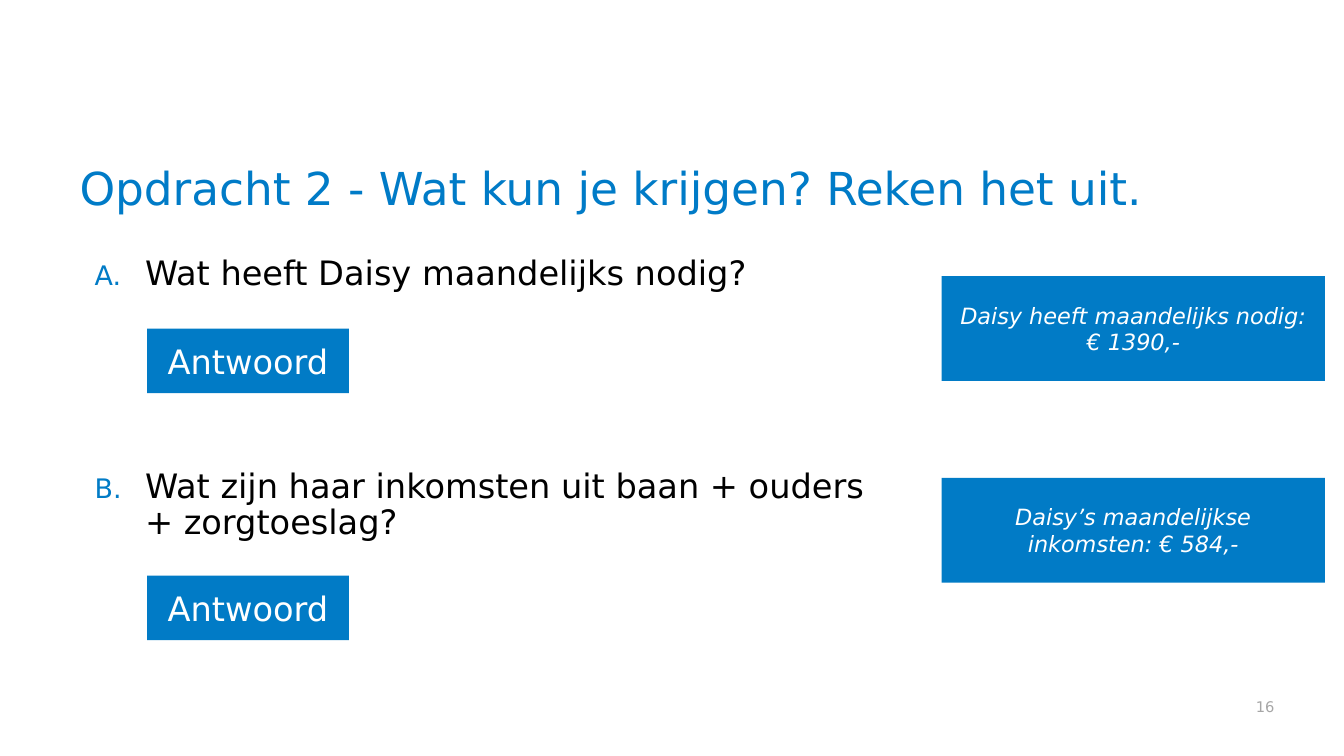
from lxml import etree
from pptx import Presentation
from pptx.dml.color import RGBColor
from pptx.enum.shapes import MSO_SHAPE
from pptx.enum.text import MSO_ANCHOR, PP_ALIGN
from pptx.oxml.ns import qn
from pptx.util import Inches, Pt

RECT = MSO_SHAPE.RECTANGLE
TOP, MIDDLE, BOTTOM = MSO_ANCHOR.TOP, MSO_ANCHOR.MIDDLE, MSO_ANCHOR.BOTTOM
LEFT, CENTER, RIGHT = PP_ALIGN.LEFT, PP_ALIGN.CENTER, PP_ALIGN.RIGHT


class SlideBuilder:
    font = "DejaVu Sans"
    colors = {
        "title": "007BC7",
        "accent": "017BC6",
        "text": "000000",
        "light": "FFFFFF",
        "muted": "A6A6A6",
    }

    def __init__(self, prs):
        self.s = prs.slides.add_slide(prs.slide_layouts[6])

    def color(self, name):
        return RGBColor.from_string(self.colors[name])

    def frame(self, sp, anchor, **margins):
        tf = sp.text_frame
        formats = {"word_wrap": True, "vertical_anchor": anchor, **margins}
        for name, value in formats.items():
            setattr(tf, name, value)
        return tf

    def add_words(self, p, text, size, color, align=LEFT, italic=False):
        p.alignment = align
        r = p.add_run()
        r.text = text
        formats = {"name": self.font, "size": Pt(size), "italic": italic}
        for name, value in formats.items():
            setattr(r.font, name, value)
        r.font.color.rgb = self.color(color)

    def text(self, box, text, size, color, align=LEFT, spacing=1.0, **margins):
        sp = self.s.shapes.add_textbox(*map(Inches, box))
        p = self.frame(sp, BOTTOM, **margins).paragraphs[0]
        p.line_spacing = spacing
        self.add_words(p, text, size, color, align)

    def letter(self, p):
        pPr = p._p.get_or_add_pPr()
        pPr.set("marL", str(Inches(0.65)))
        pPr.set("indent", str(Inches(-0.5)))
        clr = etree.SubElement(pPr, qn("a:buClr"))
        etree.SubElement(clr, qn("a:srgbClr"), val=self.colors["accent"])
        etree.SubElement(pPr, qn("a:buSzPct"), val="80000")
        etree.SubElement(pPr, qn("a:buFont"), typeface=self.font)
        etree.SubElement(pPr, qn("a:buAutoNum"), type="alphaUcPeriod")

    def questions(self, box, texts, size, gap):
        sp = self.s.shapes.add_textbox(*map(Inches, box))
        tf = self.frame(sp, TOP)
        for i, text in enumerate(texts):
            p = tf.add_paragraph() if i else tf.paragraphs[0]
            self.letter(p)
            p.line_spacing = 0.9
            if i:
                p.space_before = Pt(gap)
            self.add_words(p, text, size, "text")

    def block(self, box, text, size, italic=False):
        sp = self.s.shapes.add_shape(RECT, *map(Inches, box))
        sp.shadow.inherit = False
        sp.fill.solid()
        sp.fill.fore_color.rgb = self.color("accent")
        sp.line.fill.background()
        p = self.frame(sp, MIDDLE).paragraphs[0]
        self.add_words(p, text, size, "light", CENTER, italic)


def main():
    prs = Presentation()
    prs.slide_width, prs.slide_height = Inches(13.33), Inches(7.5)
    slide = SlideBuilder(prs)

    slide.questions(
        (0.69, 2.5, 8.36, 4.3),
        ["Wat heeft Daisy maandelijks nodig?",
         "Wat zijn haar inkomsten uit baan + ouders + zorgtoeslag?"],
        size=24, gap=126)
    slide.text((0.69, 1.15, 11.95, 1.04),
               "Opdracht 2 - Wat kun je krijgen? Reken het uit.",
               32.4, "title", spacing=0.9)
    slide.text((7.17, 6.8, 5.47, 0.35), "16", 10.5, "muted", RIGHT,
               margin_right=0)

    answers = [
        (3.26, 2.74, "Daisy heeft maandelijks nodig: € 1390,-"),
        (5.71, 4.74, "Daisy’s maandelijkse inkomsten: € 584,-"),
    ]
    for button_top, answer_top, answer in answers:
        slide.block((1.46, button_top, 2, 0.64), "Antwoord", 24)
        slide.block((9.34, answer_top, 3.8, 1.04), answer, 16, italic=True)

    prs.save("out.pptx")


if __name__ == "__main__":
    main()
